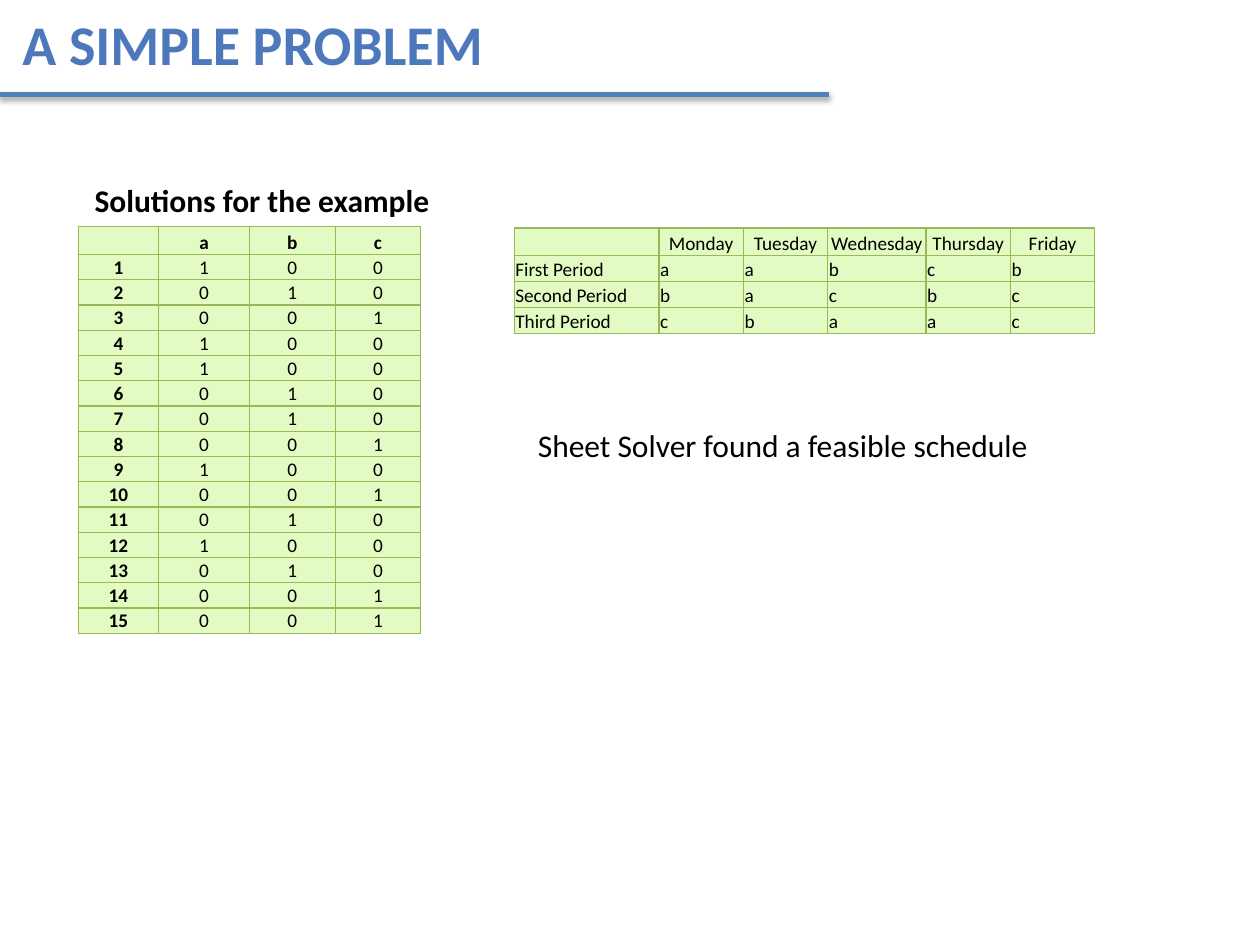
from lxml.etree import SubElement
from pptx import Presentation
from pptx.dml.color import RGBColor
from pptx.enum.shapes import MSO_CONNECTOR
from pptx.enum.text import MSO_ANCHOR, MSO_AUTO_SIZE, PP_ALIGN
from pptx.oxml.ns import qn
from pptx.util import Inches, Pt

FONT = "Calibri"
BLACK, TITLE, RULE = "000000", "4D79BC", "4F81BD"
CELL, EDGE = "E2FBC2", "98B955"

# Letter chosen for each of the 15 numbered rows
PICKS = "abcaabbcacbabcc"
LETTERS = "abc"
CHOICES = [["", *LETTERS]] + [
    [str(num), *(str(int(pick == let)) for let in LETTERS)]
    for num, pick in enumerate(PICKS, 1)
]
WEEK = [
    ["", "Monday", "Tuesday", "Wednesday", "Thursday", "Friday"],
    ["First Period", *"aabcb"],
    ["Second Period", *"bacbc"],
    ["Third Period", *"cbaac"],
]

# text, box, size, bold, colour, alignment
TEXTS = [
    ("A SIMPLE PROBLEM", (0.08, 0.03, 5.75, 0.64), 32, True, TITLE, PP_ALIGN.LEFT),
    ("Solutions for the example", (-2.92, 1.39, 10, 0.42), 18, True, BLACK, PP_ALIGN.CENTER),
    ("Sheet Solver found a feasible schedule", (4.17, 3.33, 4.58, 0.4), 18, False, BLACK,
     PP_ALIGN.LEFT),
]


def tint(code):
    return RGBColor.from_string(code)


def write(para, text, size, bold=False, color=BLACK, align=PP_ALIGN.LEFT):
    para.alignment = align
    run = para.add_run()
    run.text = text
    font = run.font
    font.name, font.size, font.bold = FONT, Pt(size), bold
    font.color.rgb = tint(color)


def add_text(slide, text, box, *look):
    frame = slide.shapes.add_textbox(*map(Inches, box)).text_frame
    frame.word_wrap = True
    frame.auto_size = MSO_AUTO_SIZE.SHAPE_TO_FIT_TEXT
    write(frame.paragraphs[0], text, *look)


def add_rule(slide, y, width):
    """Draw the title underline with a soft shadow below it."""
    line = slide.shapes.add_connector(
        MSO_CONNECTOR.STRAIGHT, 0, Inches(y), Inches(width), Inches(y))
    line.line.color.rgb = tint(RULE)
    line.line.width = Pt(3)
    effects = SubElement(line._element.spPr, qn("a:effectLst"))
    shade = SubElement(effects, qn("a:outerShdw"), blurRad=str(Pt(3.1)),
                       dist=str(Pt(1.8)), dir="5400000", rotWithShape="0")
    color = SubElement(shade, qn("a:srgbClr"), val=BLACK)
    SubElement(color, qn("a:alpha"), val="35000")


def style(cell):
    props = cell._tc.get_or_add_tcPr()
    for side in ("lnL", "lnR", "lnT", "lnB"):
        edge = SubElement(props, qn(f"a:{side}"), w=str(Pt(0.75)))
        SubElement(SubElement(edge, qn("a:solidFill")), qn("a:srgbClr"), val=EDGE)
    cell.fill.solid()
    cell.fill.fore_color.rgb = tint(CELL)
    cell.vertical_anchor = MSO_ANCHOR.BOTTOM
    cell.margin_left = cell.margin_right = cell.margin_top = Inches(0.01)
    cell.margin_bottom = 0


def add_grid(slide, data, left, top, cols, height, look, head=0.22):
    """Add a table; look(row, col) gives each cell's bold and alignment."""
    table = slide.shapes.add_table(
        len(data), len(cols), Inches(left), Inches(top),
        Inches(sum(cols)), Inches(height)).table
    table.first_row = table.horz_banding = False
    for col, width in zip(table.columns, cols):
        col.width = Inches(width)
    rest = (height - head) / (len(data) - 1)
    for r, line in enumerate(data):
        table.rows[r].height = Inches(rest if r else head)
        for c, text in enumerate(line):
            cell = table.cell(r, c)
            style(cell)
            para = cell.text_frame.paragraphs[0]
            if text:
                bold, align = look(r, c)
                write(para, text, 11, bold, align=align)
            else:
                SubElement(para._p, qn("a:endParaRPr"), sz="1100")


def main():
    deck = Presentation()
    deck.slide_width, deck.slide_height = Inches(10), Inches(7.5)
    slide = deck.slides.add_slide(deck.slide_layouts[6])
    add_rule(slide, 0.75, 6.58)
    for item in TEXTS:
        add_text(slide, *item)
    add_grid(slide, CHOICES, 0.62, 1.8, [0.64, 0.72, 0.68, 0.68], 3.23,
             lambda r, c: (r == 0 or c == 0, PP_ALIGN.CENTER))
    add_grid(slide, WEEK, 4.08, 1.81, [1.15, 0.67, 0.67, 0.78, 0.67, 0.67], 0.84,
             lambda r, c: (False, PP_ALIGN.LEFT if r else PP_ALIGN.CENTER))
    deck.save("out.pptx")


if __name__ == "__main__":
    main()
